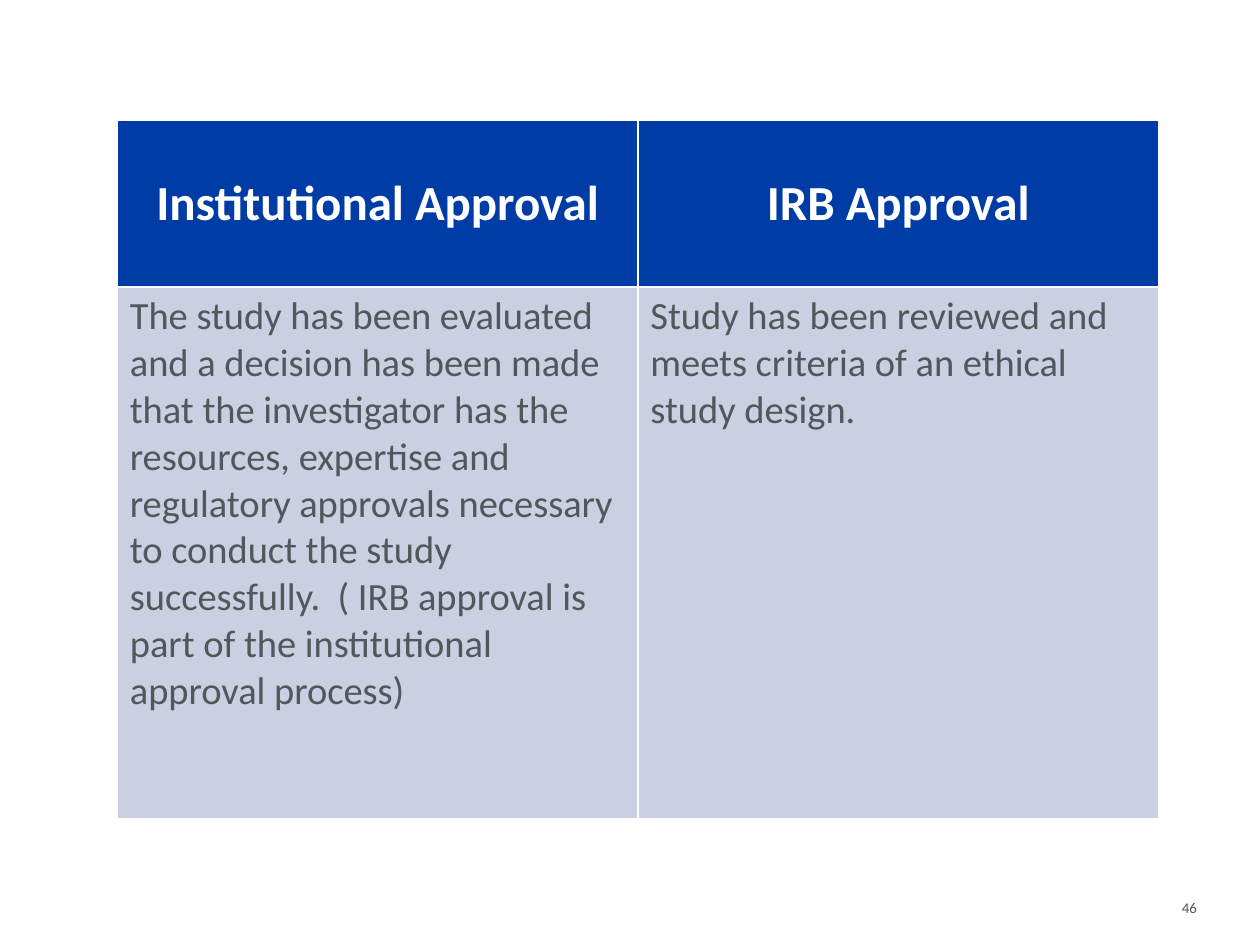
"""Build a slide comparing institutional approval with IRB approval."""
from dataclasses import dataclass

from pptx import Presentation
from pptx.dml.color import RGBColor
from pptx.enum import text
from pptx.util import Pt


@dataclass(frozen=True)
class Theme:
    """Colours, font and type sizes of the slide."""
    font: str = "Calibri"
    header_fill: str = "003CA5"
    body_fill: str = "CCCEE1"
    white: str = "FFFFFF"
    grey: str = "53565A"
    header_size: float = 28
    body_size: float = 22
    number_size: float = 8.5


@dataclass(frozen=True)
class Approval:
    """One kind of approval and what it means."""
    heading: str
    meaning: str


@dataclass(frozen=True)
class Style:
    """Look of a block of text."""
    size: float
    colour: str
    bold: bool
    align: text.PP_ALIGN
    anchor: text.MSO_ANCHOR


THEME = Theme()
HEADER = Style(THEME.header_size, THEME.white, True,
               text.PP_ALIGN.CENTER, text.MSO_ANCHOR.MIDDLE)
BODY = Style(THEME.body_size, THEME.grey, False,
             text.PP_ALIGN.LEFT, text.MSO_ANCHOR.TOP)
NUMBER = Style(THEME.number_size, THEME.grey, False,
               text.PP_ALIGN.RIGHT, text.MSO_ANCHOR.BOTTOM)

APPROVALS = [
    Approval(
        "Institutional Approval",
        "The study has been evaluated and a decision has been made that the "
        "investigator has the resources, expertise and regulatory approvals "
        "necessary to conduct the study successfully.  ( IRB approval is part "
        "of the institutional approval process)",
    ),
    Approval(
        "IRB Approval",
        "Study has been reviewed and meets criteria of an ethical study design.",
    ),
]


def write(frame, words: str, style: Style) -> None:
    """Put styled words into a text frame."""
    frame.text = words
    paragraph = frame.paragraphs[0]
    paragraph.alignment = style.align
    font = paragraph.runs[0].font
    formats = {"name": THEME.font, "size": Pt(style.size), "bold": style.bold}
    for attribute, value in formats.items():
        setattr(font, attribute, value)
    font.color.rgb = RGBColor.from_string(style.colour)


def fill_cell(cell, words: str, style: Style, fill: str) -> None:
    """Fill a table cell with a colour and styled words."""
    cell.fill.solid()
    cell.fill.fore_color.rgb = RGBColor.from_string(fill)
    cell.vertical_anchor = style.anchor
    write(cell.text_frame, words, style)


def draw_comparison(slide, approvals: list[Approval]) -> None:
    """Draw the approvals side by side in a table."""
    column_width, row_heights = 297.5, (95, 304)
    comparison = slide.shapes.add_table(
        len(row_heights), len(approvals), Pt(67), Pt(69),
        Pt(column_width * len(approvals)), Pt(sum(row_heights))).table
    for row, height in zip(comparison.rows, row_heights):
        row.height = Pt(height)
    for column, approval in enumerate(approvals):
        comparison.columns[column].width = Pt(column_width)
        fill_cell(comparison.cell(0, column), approval.heading, HEADER, THEME.header_fill)
        fill_cell(comparison.cell(1, column), approval.meaning, BODY, THEME.body_fill)


def draw_page_number(slide, number: int) -> None:
    """Draw the page number at the bottom right."""
    frame = slide.shapes.add_textbox(Pt(625.5), Pt(502), Pt(58.5), Pt(22)).text_frame
    formats = {"word_wrap": True, "vertical_anchor": NUMBER.anchor,
               "margin_left": 0, "margin_top": 0,
               "margin_right": 0, "margin_bottom": 0}
    for attribute, value in formats.items():
        setattr(frame, attribute, value)
    write(frame, str(number), NUMBER)


def main() -> None:
    """Build and save the presentation."""
    deck = Presentation()
    deck.slide_width, deck.slide_height = Pt(720), Pt(540)
    slide = deck.slides.add_slide(deck.slide_layouts[6])
    draw_comparison(slide, APPROVALS)
    draw_page_number(slide, 46)
    deck.save("out.pptx")


if __name__ == "__main__":
    main()
